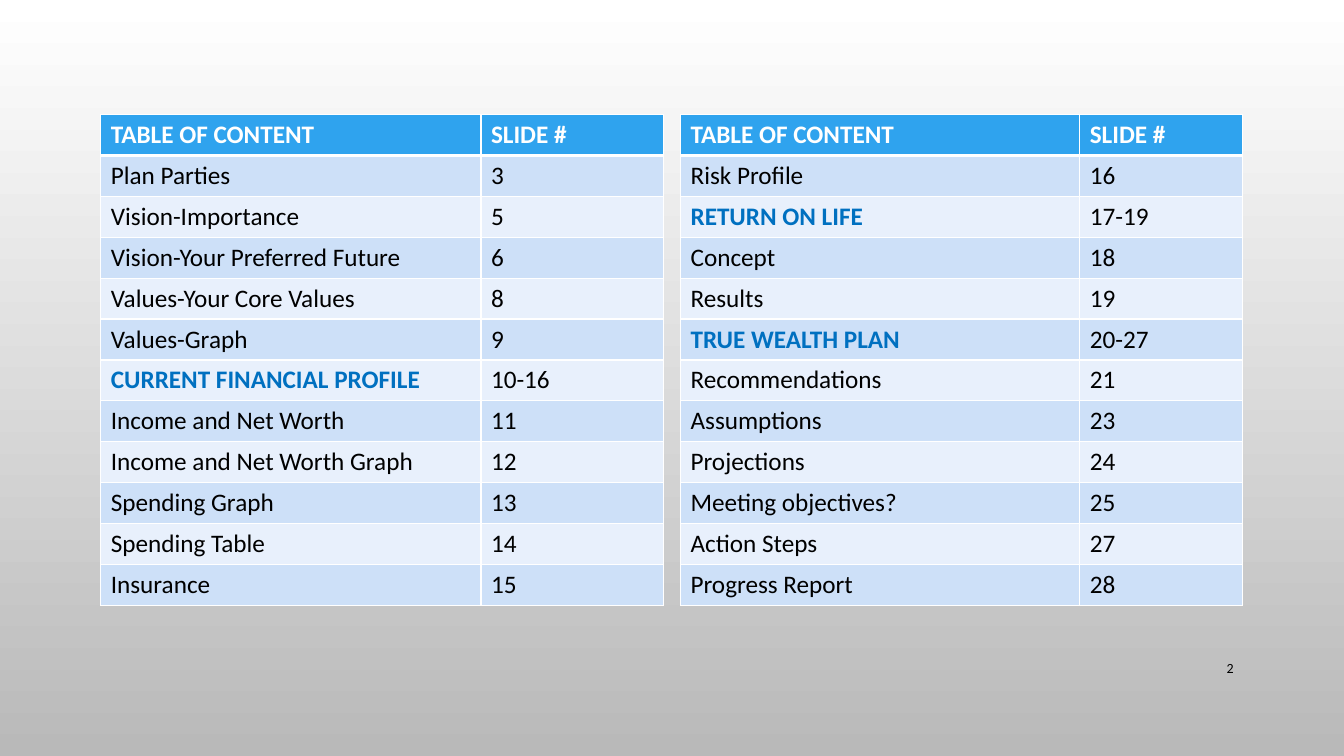
from lxml.etree import SubElement
from pptx import Presentation
from pptx.dml.color import RGBColor
from pptx.enum.text import MSO_ANCHOR, PP_ALIGN
from pptx.oxml.ns import qn
from pptx.util import Cm, Pt

HEADER_FILL = "2FA3EE"
BAND_FILLS = ("CDE0F8", "E8F0FC")
WHITE, BLACK, SECTION_BLUE = "FFFFFF", "000000", "0070C0"
ROW_HEIGHT = 1.03
TABLE_TOP = 2.89

HEADINGS = ("TABLE OF CONTENT", "SLIDE #")
FIRST_ENTRIES = [
    ("Plan Parties", "3"),
    ("Vision-Importance", "5"),
    ("Vision-Your Preferred Future", "6"),
    ("Values-Your Core Values", "8"),
    ("Values-Graph", "9"),
    ("CURRENT FINANCIAL PROFILE", "10-16"),
    ("Income and Net Worth", "11"),
    ("Income and Net Worth Graph", "12"),
    ("Spending Graph", "13"),
    ("Spending Table", "14"),
    ("Insurance", "15"),
]
SECOND_ENTRIES = [
    ("Risk Profile", "16"),
    ("RETURN ON LIFE", "17-19"),
    ("Concept", "18"),
    ("Results", "19"),
    ("TRUE WEALTH PLAN", "20-27"),
    ("Recommendations", "21"),
    ("Assumptions", "23"),
    ("Projections", "24"),
    ("Meeting objectives?", "25"),
    ("Action Steps", "27"),
    ("Progress Report", "28"),
]


def color(value):
    return RGBColor.from_string(value)


def write(frame, text, size=18, fill=BLACK, bold=False, align=PP_ALIGN.LEFT):
    para = frame.paragraphs[0]
    para.alignment = align
    span = para.add_run()
    span.text = text
    span.font.name = "Calibri"
    span.font.size = Pt(size)
    span.font.bold = bold
    span.font.color.rgb = color(fill)


def set_borders(cell, **widths):
    properties = cell._tc.get_or_add_tcPr()
    for side in ("L", "R", "T", "B"):
        line = SubElement(properties, qn(f"a:ln{side}"), w=str(Pt(widths.get(side, 1))))
        solid = SubElement(line, qn("a:solidFill"))
        SubElement(solid, qn("a:srgbClr"), val=WHITE)


def set_fill(cell, value):
    cell.fill.solid()
    cell.fill.fore_color.rgb = color(value)


def add_contents_table(page, left, widths, entries):
    rows = [HEADINGS, *entries]
    frame = page.shapes.add_table(
        len(rows), len(widths), Cm(left), Cm(TABLE_TOP),
        Cm(sum(widths)), Cm(ROW_HEIGHT * len(rows)),
    )
    table = frame.table
    for column, width in zip(table.columns, widths):
        column.width = Cm(width)
    for row_index, texts in enumerate(rows):
        table.rows[row_index].height = Cm(ROW_HEIGHT)
        header = row_index == 0
        for column_index, text in enumerate(texts):
            cell = table.cell(row_index, column_index)
            section = not header and text.isupper()
            set_borders(cell, T=3 if row_index == 1 else 1, B=3 if header else 1)
            set_fill(cell, HEADER_FILL if header else BAND_FILLS[(row_index - 1) % 2])
            text_fill = WHITE if header else SECTION_BLUE if section else BLACK
            write(cell.text_frame, text, fill=text_fill, bold=header or section)


def add_page_number(page, number):
    box = page.shapes.add_textbox(Cm(29.21), Cm(16.33), Cm(2.13), Cm(1.02))
    box.text_frame.word_wrap = True
    box.text_frame.vertical_anchor = MSO_ANCHOR.MIDDLE
    write(box.text_frame, number, size=10, align=PP_ALIGN.RIGHT)


def set_background(page, top, bottom):
    fill = page.background.fill
    fill.gradient()
    fill.gradient_angle = 270
    for stop, value, position in zip(fill.gradient_stops, (top, bottom), (0, 1)):
        stop.color.rgb = color(value)
        stop.position = position


def main():
    deck = Presentation()
    deck.slide_width, deck.slide_height = Cm(33.87), Cm(19.05)
    page = deck.slides.add_slide(deck.slide_layouts[6])
    set_background(page, WHITE, "B9B9B9")
    add_contents_table(page, 2.54, (9.58, 4.6), FIRST_ENTRIES)
    add_contents_table(page, 17.15, (10.06, 4.11), SECOND_ENTRIES)
    add_page_number(page, "2")
    deck.save("out.pptx")


if __name__ == "__main__":
    main()
